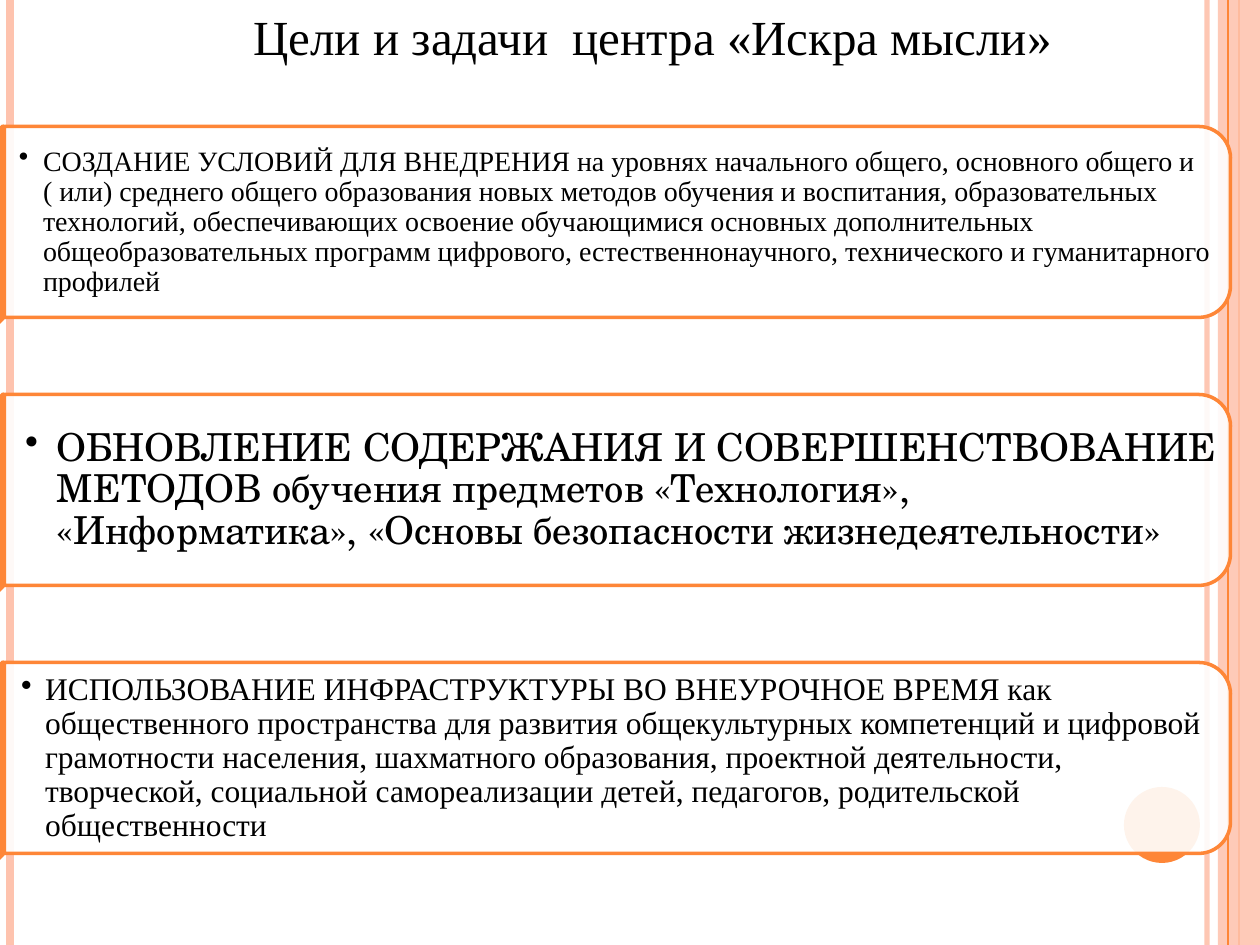
from dataclasses import dataclass
from typing import Any

from lxml.etree import SubElement
from pptx import Presentation
from pptx.dml.color import RGBColor
from pptx.enum.shapes import MSO_CONNECTOR as Connector, MSO_SHAPE as Shape
from pptx.enum.text import MSO_ANCHOR as Anchor
from pptx.oxml.ns import qn
from pptx.util import Emu, Pt

COLORS = {"text": "000000", "panel": "FFFFFF", "orange": "FE8637", "pink": "FEC3AE"}
WIDTH, HEIGHT = 1260, 945
ROW_PITCH = 268
SERIF, SCHOOL = "Times New Roman", "TeX Gyre Schola"
GOALS = [
    (
        "СОЗДАНИЕ УСЛОВИЙ ДЛЯ ВНЕДРЕНИЯ на уровнях начального общего, основного общего и "
        "( или) среднего общего образования новых методов обучения и воспитания, "
        "образовательных технологий, обеспечивающих освоение обучающимися основных "
        "дополнительных общеобразовательных программ цифрового, естественнонаучного, "
        "технического и гуманитарного профилей",
        16, SERIF, 15, 1, 24,
    ),
    (
        "ОБНОВЛЕНИЕ СОДЕРЖАНИЯ И СОВЕРШЕНСТВОВАНИЕ МЕТОДОВ обучения предметов "
        "«Технология», «Информатика», «Основы безопасности жизнедеятельности»",
        22, SCHOOL, 21, 2, 32,
    ),
    (
        "ИСПОЛЬЗОВАНИЕ ИНФРАСТРУКТУРЫ ВО ВНЕУРОЧНОЕ ВРЕМЯ как общественного пространства "
        "для развития общекультурных компетенций и цифровой грамотности населения, "
        "шахматного образования, проектной деятельности, творческой, социальной "
        "самореализации детей, педагогов, родительской общественности",
        18, SERIF, 17, 1, 24,
    ),
]


def px(value):
    """Turn pixels into EMU."""
    return Emu(round(value * 914400 / 126))


@dataclass
class GoalSlide:
    """Hold the style and the current slide."""

    slide: Any
    colors: dict

    def paint(self, color_format, name, opacity=100):
        """Set a colour and, if needed, its opacity."""
        color_format.rgb = RGBColor.from_string(self.colors[name])
        if opacity < 100:
            for color in color_format._xFill.iter(qn("a:srgbClr")):
                SubElement(color, qn("a:alpha"), val=str(opacity * 1000))

    def stripe(self, x, color, width, opacity=100):
        """Draw a vertical line over the full height."""
        line = self.slide.shapes.add_connector(Connector.STRAIGHT, px(x), 0, px(x), px(HEIGHT))
        line.line.width = Pt(width)
        line.line.fill.solid()
        self.paint(line.line.fill.fore_color, color, opacity)
        SubElement(line._element.spPr, qn("a:effectLst"))

    def shape(self, preset, box, fill, opacity=100, outline=None, rotation=0):
        """Draw a preset shape."""
        form = self.slide.shapes.add_shape(preset, *map(px, box))
        form.shadow.inherit = False
        form.rotation = rotation
        form.fill.solid()
        self.paint(form.fill.fore_color, fill, opacity)
        if outline:
            form.line.width = Pt(2)
            form.line.fill.solid()
            self.paint(form.line.fill.fore_color, outline)
        else:
            form.line.fill.background()

    def text(self, box, words, size, font):
        """Write a paragraph in a text box and return its frame."""
        frame = self.slide.shapes.add_textbox(*map(px, box)).text_frame
        frame.word_wrap = True
        run = frame.paragraphs[0].add_run()
        run.text = words
        run.font.size = Pt(size)
        run.font.name = font
        self.paint(run.font.color, "text")
        return frame

    def goal(self, top, words, size, font, left_inset, inset, indent):
        """Draw a goal: chevron, rounded panel and bulleted text."""
        self.shape(Shape.CHEVRON, (-247, top + 35, 295, 205), "orange",
                   outline="orange", rotation=90)
        self.shape(Shape.ROUND_2_SAME_RECTANGLE, (522, top - 527, 191, 1226), "panel",
                   opacity=90, outline="orange", rotation=90)
        frame = self.text((4, top, 1217, 173), words, size, font)
        frame.vertical_anchor = Anchor.MIDDLE
        frame.margin_left = px(left_inset)
        frame.margin_top = frame.margin_right = frame.margin_bottom = px(inset)
        paragraph = frame.paragraphs[0]
        paragraph.line_spacing = 0.9
        paragraph.space_after = Pt(size * 0.15)
        properties = paragraph._p.get_or_add_pPr()
        properties.set("marL", str(px(indent)))
        properties.set("indent", str(-px(indent)))
        SubElement(properties, qn("a:buChar"), char="•")


def main():
    """Build the slide with the three goals of the centre."""
    deck = Presentation()
    deck.slide_width, deck.slide_height = px(WIDTH), px(HEIGHT)
    page = GoalSlide(deck.slides.add_slide(deck.slide_layouts[6]), COLORS)

    page.stripe(1207, "pink", 3, opacity=93)
    page.stripe(10, "pink", 4.5)
    page.stripe(1239, "orange", 1.5)
    page.shape(Shape.RECTANGLE, (1218, 0, 42, HEIGHT), "pink", opacity=87)
    page.stripe(1228, "orange", 0.75)
    page.shape(Shape.OVAL, (1124, 787, 76, 76), "orange")

    page.text((241, 0, 916, 72), "Цели и задачи  центра «Искра мысли»", 28, SERIF)
    for row, goal in enumerate(GOALS):
        page.goal(136 + row * ROW_PITCH, *goal)

    deck.save("out.pptx")


if __name__ == "__main__":
    main()
